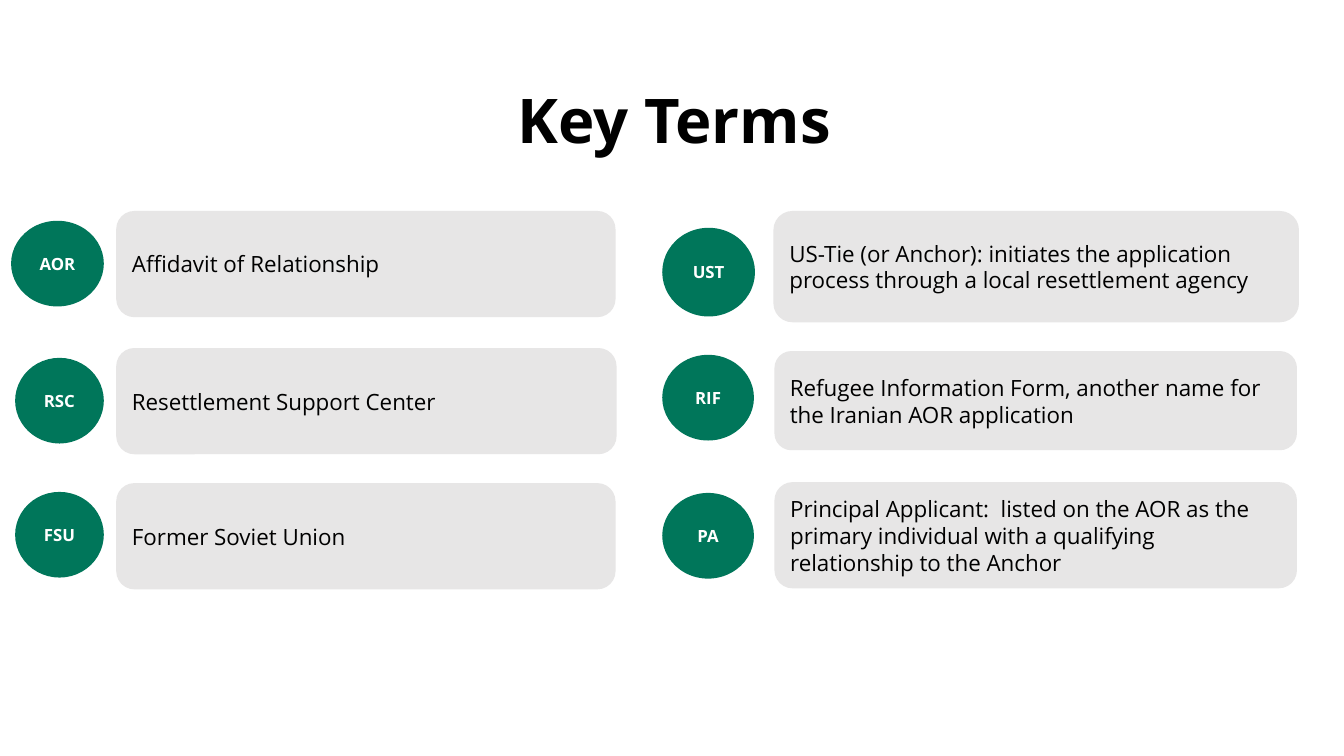
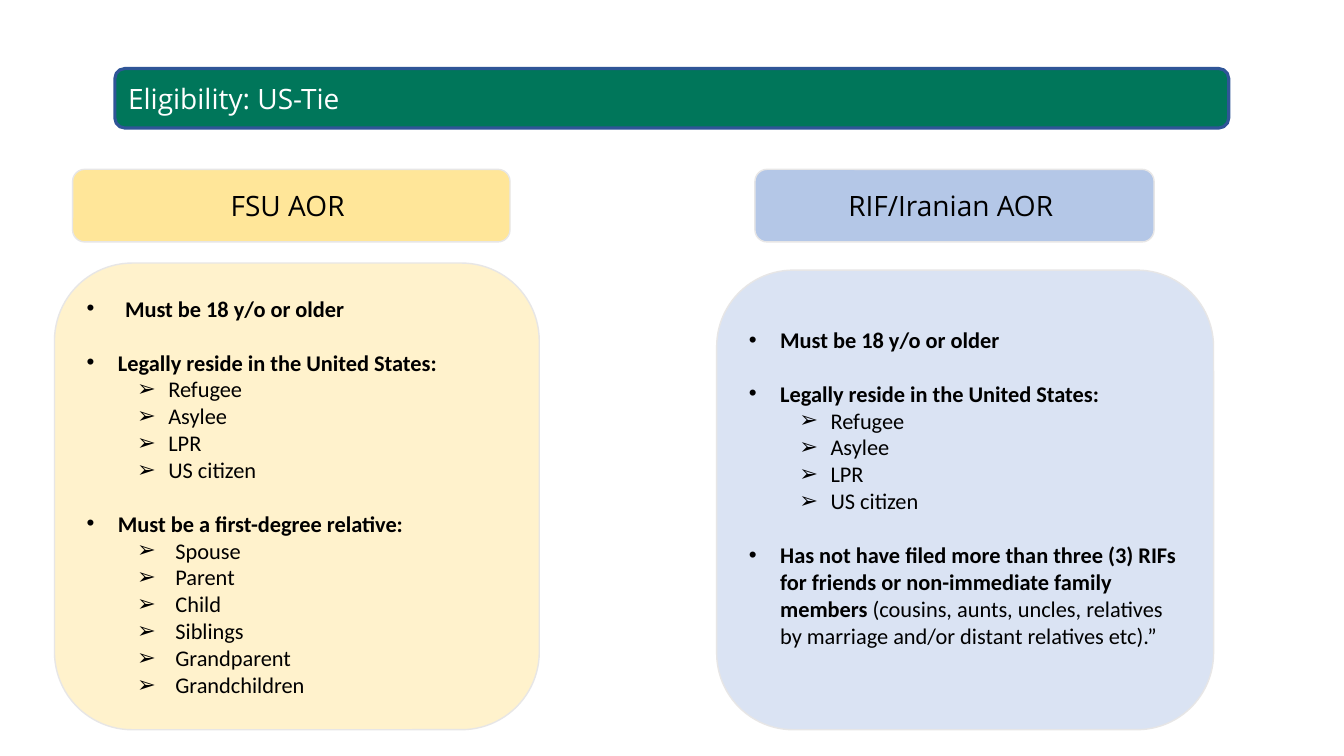
import dataclasses

import lxml.etree
import pptx
import pptx.dml.color
import pptx.enum.shapes
import pptx.enum.text
import pptx.oxml.ns
import pptx.util

SHAPE = pptx.enum.shapes.MSO_SHAPE
ALIGN = pptx.enum.text.PP_ALIGN
ANCHOR = pptx.enum.text.MSO_ANCHOR


@dataclasses.dataclass(frozen=True)
class Theme:
    black: str = "000000"
    white: str = "FFFFFF"
    green: str = "00765A"
    navy: str = "2F5597"
    gray: str = "E7E6E6"
    gold: str = "FFE699"
    cream: str = "FFF2CC"
    blue: str = "B4C7E7"
    pale: str = "DAE3F3"
    sans: str = "Open Sans"
    plain: str = "Calibri"
    huge: int = 44
    large: int = 20
    body: int = 16
    small: int = 12
    thin: float = 1
    thick: float = 2.25
    gap: float = 19.2


THEME = Theme()
COLS, ROWS = 40, 22.5
WIDE, HIGH = pptx.util.Inches(13.333), pptx.util.Inches(7.5)


def tint(code):
    return pptx.dml.color.RGBColor.from_string(code)


def write(para, words, size=THEME.body, font=THEME.sans, color=THEME.black,
          bold=False, align=ALIGN.LEFT):
    para.alignment = align
    run = para.add_run()
    run.text = words
    run.font.size = pptx.util.Pt(size)
    run.font.name = font
    run.font.bold = bold
    run.font.color.rgb = tint(color)


class Deck:
    def __init__(self, theme):
        self.theme = theme
        self.show = pptx.Presentation()
        self.show.slide_width, self.show.slide_height = WIDE, HIGH
        self.slide = None

    def start(self, index):
        self.slide = self.show.slides.add_slide(self.show.slide_layouts[index])

    def grid(self, box):
        left, top, width, height = box
        return (round(left * WIDE / COLS), round(top * HIGH / ROWS),
                round(width * WIDE / COLS), round(height * HIGH / ROWS))

    def shape(self, kind, box, fill, line=None, weight=THEME.thin):
        item = self.slide.shapes.add_shape(kind, *self.grid(box))
        item.shadow.inherit = False
        item.fill.solid()
        item.fill.fore_color.rgb = tint(fill)
        if line:
            item.line.color.rgb = tint(line)
            item.line.width = pptx.util.Pt(weight)
        else:
            item.line.fill.background()
        item.text_frame.word_wrap = True
        item.text_frame.vertical_anchor = ANCHOR.MIDDLE
        return item

    def card(self, box, words, fill=THEME.gray, **style):
        item = self.shape(SHAPE.ROUNDED_RECTANGLE, box, fill, self.theme.gray)
        write(item.text_frame.paragraphs[0], words, **style)

    def badge(self, box, words):
        item = self.shape(SHAPE.OVAL, box, self.theme.green)
        frame = item.text_frame
        frame.margin_left = frame.margin_right = 0
        write(frame.paragraphs[0], words, size=self.theme.small,
              color=self.theme.white, bold=True, align=ALIGN.CENTER)

    def place(self, holder, box, anchor, side=0.1, base=0.05):
        holder.left, holder.top, holder.width, holder.height = self.grid(box)
        holder._element.getparent().append(holder._element)
        frame = holder.text_frame
        frame.word_wrap = True
        frame.auto_size = pptx.enum.text.MSO_AUTO_SIZE.NONE
        frame.vertical_anchor = anchor
        frame.margin_left = frame.margin_right = pptx.util.Inches(side)
        frame.margin_bottom = pptx.util.Inches(base)
        return frame

    def title(self, box, words, anchor=ANCHOR.TOP, side=0.1, **style):
        frame = self.place(self.slide.shapes.title, box, anchor, side)
        write(frame.paragraphs[0], words, **style)

    def banner(self, box, words):
        self.shape(SHAPE.ROUNDED_RECTANGLE, box, self.theme.green,
                   self.theme.navy, self.theme.thick)
        self.title(box, words, ANCHOR.MIDDLE, 0.13, size=self.theme.large,
                   color=self.theme.white)

    def bullet(self, para, mark, left, hang):
        props = para._p.get_or_add_pPr()
        props.set("marL", str(pptx.util.Inches(left)))
        props.set("indent", str(-pptx.util.Inches(hang)))
        for tag, key, value in (("a:buFont", "typeface", "Arial"),
                                ("a:buChar", "char", mark)):
            node = lxml.etree.SubElement(props, pptx.oxml.ns.qn(tag))
            node.set(key, value)

    def panel(self, slot, box, fill, groups, base):
        self.shape(SHAPE.ROUNDED_RECTANGLE, box, fill, self.theme.gray)
        frame = self.place(self.slide.placeholders[slot], box, ANCHOR.MIDDLE,
                           0.32, base)
        fresh = True
        for head, tail, hang, points, inner in groups:
            rows = [(0, "•", hang, hang, head, tail)]
            rows += [(1, "➢", 0.5 + inner, inner, "", point) for point in points]
            for level, mark, left, dent, strong, light in rows:
                para = frame.paragraphs[0] if fresh else frame.add_paragraph()
                para.level = level
                lead = 0 if fresh or level else self.theme.gap
                para.space_before = pptx.util.Pt(lead)
                self.bullet(para, mark, left, dent)
                for words, bold in ((strong, True), (light, False)):
                    if words:
                        write(para, words, font=self.theme.plain, bold=bold)
                fresh = False


TERMS = (
    ("AOR", (0.33, 6.57, 2.76, 2.55), (3.48, 6.3, 14.82, 3.12),
     "Affidavit of Relationship"),
    ("RSC", (0.45, 10.65, 2.64, 2.55), (3.48, 10.38, 14.85, 3.12),
     "Resettlement Support Center"),
    ("FSU", (0.45, 14.64, 2.64, 2.55), (3.48, 14.4, 14.82, 3.12),
     "Former Soviet Union"),
    ("UST", (19.71, 6.78, 2.76, 2.64), (23.04, 6.3, 15.6, 3.27),
     "US-Tie (or Anchor): initiates the application process through a local "
     "resettlement agency"),
    ("RIF", (19.71, 10.56, 2.73, 2.55), (23.07, 10.47, 15.51, 2.91),
     "Refugee Information Form, another name for the Iranian AOR application"),
    ("PA", (19.71, 14.67, 2.73, 2.55), (23.07, 14.37, 15.51, 3.12),
     "Principal Applicant:  listed on the AOR as the primary individual with "
     "a qualifying relationship to the Anchor"),
)

ADULT = "Must be 18 y/o or older"
STATUS = ("Legally reside in the United States:", "", 0.31,
          ("Refugee", "Asylee", "LPR", "US citizen"), 0.31)
KIN = ("Must be a first-degree relative:", "", 0.31,
       ("Spouse", "Parent", "Child", "Siblings", "Grandparent",
        "Grandchildren"), 0.38)
LIMIT = ("Has not have filed more than three (3) RIFs for friends or "
         "non-immediate family members ",
         "(cousins, aunts, uncles, relatives by marriage and/or distant "
         "relatives etc).”", 0.31, (), 0)

PATHS = (
    (1, "FSU AOR ", (2.16, 5.04, 13.02, 2.16), THEME.gold,
     (1.62, 7.83, 14.43, 13.89), THEME.cream,
     ((ADULT, "", 0.38, (), 0), STATUS, KIN), 0.05),
    (2, "RIF/Iranian AOR ", (22.47, 5.04, 11.88, 2.16), THEME.blue,
     (21.33, 8.04, 14.79, 13.68), THEME.pale,
     ((ADULT, "", 0.31, (), 0), STATUS, LIMIT), 0.3),
)


def main():
    deck = Deck(THEME)
    deck.start(5)
    deck.title((15.09, 2.28, 10.77, 4.53), "Key Terms", size=THEME.huge,
               bold=True)
    for label, ring, box, words in TERMS:
        deck.badge(ring, label)
        deck.card(box, words)

    deck.start(3)
    deck.banner((3.42, 2.04, 33.15, 1.77), "Eligibility: US-Tie")
    for slot, label, top, shade, box, fill, groups, base in PATHS:
        deck.card(top, label, shade, size=THEME.large, align=ALIGN.CENTER)
        deck.panel(slot, box, fill, groups, base)
    deck.show.save("out.pptx")


if __name__ == "__main__":
    main()
